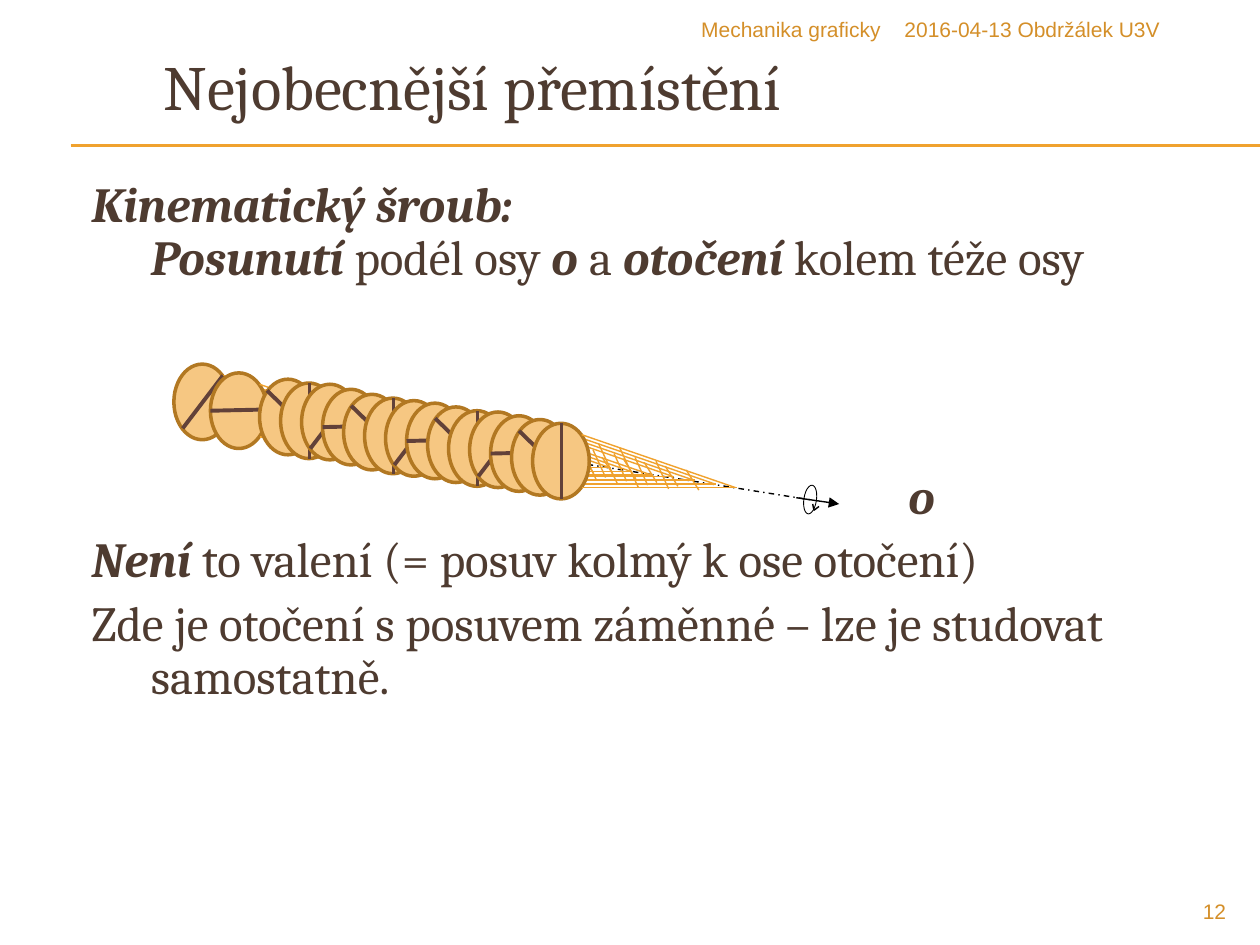
from lxml import etree
from pptx import Presentation
from pptx import util as u
from pptx.dml.color import RGBColor
from pptx.enum import dml, shapes, text
from pptx.oxml.ns import qn

COLORS = {"brown": "4E3B30", "spoke": "624139", "orange": "F0A22E", "disc": "F6C782",
          "rim": "B27822", "header": "D48F29", "black": "000000"}

# Strokes relative to the top left corner of a disc
CONE = [(0.39, 0.09, 1.61, 0.51), (0.39, 0.51, 1.62, 0.51), (0.69, 0.19, 0.84, 0.51),
        (0.98, 0.30, 1.08, 0.52), (1.22, 0.37, 1.32, 0.53)]
SPOKES = [(0.39, 0.09, 0.07, 0.51), (0.44, 0.29, 0, 0.30),
          (0.42, 0.44, 0.06, 0.09), (0.23, 0.60, 0.23, 0)]
DISC_SIZE = (0.45, 0.60)
DISC_STARTS = [1.38, 1.67] + [2.06 + i / 6 for i in range(14)]
DISC_TOPS = [2.89, 2.96, 3.01, 3.04, 3.05, 3.09, 3.13, 3.16,
             3.18, 3.20, 3.23, 3.26, 3.27, 3.30, 3.33, 3.36]


class SlideBuilder:
    """Holds the text style and the slide being drawn."""

    def __init__(self, slide):
        self.slide = slide
        self.body_font, self.header_font = "Cambria", "Arial"
        self.hanging = u.Inches(0.47)

    def color(self, name):
        return RGBColor.from_string(COLORS[name])

    def line(self, x1, y1, x2, y2, color, width=0.79, dash=None, arrow=False):
        connector = self.slide.shapes.add_connector(
            shapes.MSO_CONNECTOR.STRAIGHT, *map(u.Inches, (x1, y1, x2, y2)))
        connector.line.color.rgb = self.color(color)
        connector.line.width = u.Pt(width)
        if dash:
            connector.line.dash_style = dash
        if arrow:
            outline = connector._element.spPr.find(qn("a:ln"))
            etree.SubElement(outline, qn("a:tailEnd"), type="triangle")
        etree.SubElement(connector._element.spPr, qn("a:effectLst"))

    def strokes(self, x, y, strokes, color, width=0.79):
        for x1, y1, x2, y2 in strokes:
            self.line(x + x1, y + y1, x + x2, y + y2, color, width)

    def ellipse(self, x, y, width, height, line, line_width, fill=None, rotation=0):
        shape = self.slide.shapes.add_shape(
            shapes.MSO_SHAPE.OVAL, *map(u.Inches, (x, y, width, height)))
        shape.shadow.inherit = False
        shape.rotation = rotation
        if fill:
            shape.fill.solid()
            shape.fill.fore_color.rgb = self.color(fill)
        else:
            shape.fill.background()
        shape.line.color.rgb = self.color(line)
        shape.line.width = u.Pt(line_width)

    def text_box(self, box, paragraphs, size, color="brown", font=None,
                 align=text.PP_ALIGN.LEFT, anchor=text.MSO_ANCHOR.TOP, body=False):
        """Each paragraph is a list of (words, emphasised) runs; None breaks the line."""
        frame = self.slide.shapes.add_textbox(*map(u.Inches, box)).text_frame
        frame.word_wrap = True
        frame.vertical_anchor = anchor
        for index, runs in enumerate(paragraphs):
            paragraph = frame.add_paragraph() if index else frame.paragraphs[0]
            paragraph.alignment = align
            if body:
                properties = paragraph._p.get_or_add_pPr()
                properties.set("marL", str(self.hanging))
                properties.set("indent", str(-self.hanging))
                paragraph.line_spacing = 0.9
                if index:
                    paragraph.space_before = u.Pt(6)
            for item in runs:
                if item is None:
                    paragraph.add_line_break()
                    continue
                run = paragraph.add_run()
                run.text, emphasised = item
                run.font.size = u.Pt(size)
                run.font.name = font or self.body_font
                run.font.color.rgb = self.color(color)
                run.font.bold = run.font.italic = emphasised

    def header(self, box, words, align=text.PP_ALIGN.LEFT):
        self.text_box(box, [[(words, False)]], 12, "header", self.header_font, align)

    def body(self, box, paragraphs):
        self.text_box(box, paragraphs, 28, body=True)


def main():
    presentation = Presentation()
    presentation.slide_width, presentation.slide_height = u.Inches(10), u.Inches(7.5)
    slide = SlideBuilder(presentation.slides.add_slide(presentation.slide_layouts[6]))

    # Double rule, title, header and slide number
    for y in (1.15, 1.16):
        slide.line(0.56, y, 10, y, "orange", 0.75)
    slide.text_box((1.2, 0.2, 8.8, 0.95), [[("Nejobecnější přemístění", False)]], 36,
                   anchor=text.MSO_ANCHOR.MIDDLE)
    slide.header((3.92, 0.08, 3.17, 0.32), "Mechanika graficky", text.PP_ALIGN.RIGHT)
    slide.header((7.08, 0.08, 2.75, 0.32), "2016-04-13 Obdržálek U3V")
    slide.header((9, 7.08, 0.83, 0.27), "12", text.PP_ALIGN.RIGHT)

    # Body text above and below the drawing, and the axis label
    slide.body((0.63, 1.38, 9, 1), [
        [("Kinematický šroub:", True), None, ("Posunutí", True), (" podél osy ", False),
         ("o ", True), ("a ", False), ("otočení", True), (" kolem téže osy", False)]])
    slide.body((0.63, 4.2, 9, 1.5), [
        [("Není ", True), ("to valení (= posuv kolmý k ose otočení)", False)],
        [("Zde je otočení s posuvem záměnné – lze je studovat samostatně.", False)]])
    slide.body((7.11, 3.7, 1, 0.5), [[("o", True)]])

    # Axis with its arrow and the turning mark
    slide.line(1.67, 3.21, 6.45, 3.97, "black", dash=dml.MSO_LINE.DASH_DOT)
    slide.line(6.32, 3.95, 6.66, 4, "black", arrow=True)
    slide.ellipse(6.38, 3.85, 0.1, 0.23, "black", 0.5, rotation=8.3)
    slide.line(6.45, 4, 6.46, 4.05, "black")
    slide.line(6.5, 4.02, 6.46, 4.05, "black")

    # Screw: cones moving along the axis while the spoke turns
    for index, (x, y) in enumerate(zip(DISC_STARTS, DISC_TOPS)):
        slide.ellipse(x, y, *DISC_SIZE, "rim", 2, "disc")
        slide.strokes(x, y, CONE, "orange")
        slide.strokes(x, y, [SPOKES[index % len(SPOKES)]], "spoke", 2.25)

    presentation.save("out.pptx")


if __name__ == "__main__":
    main()
